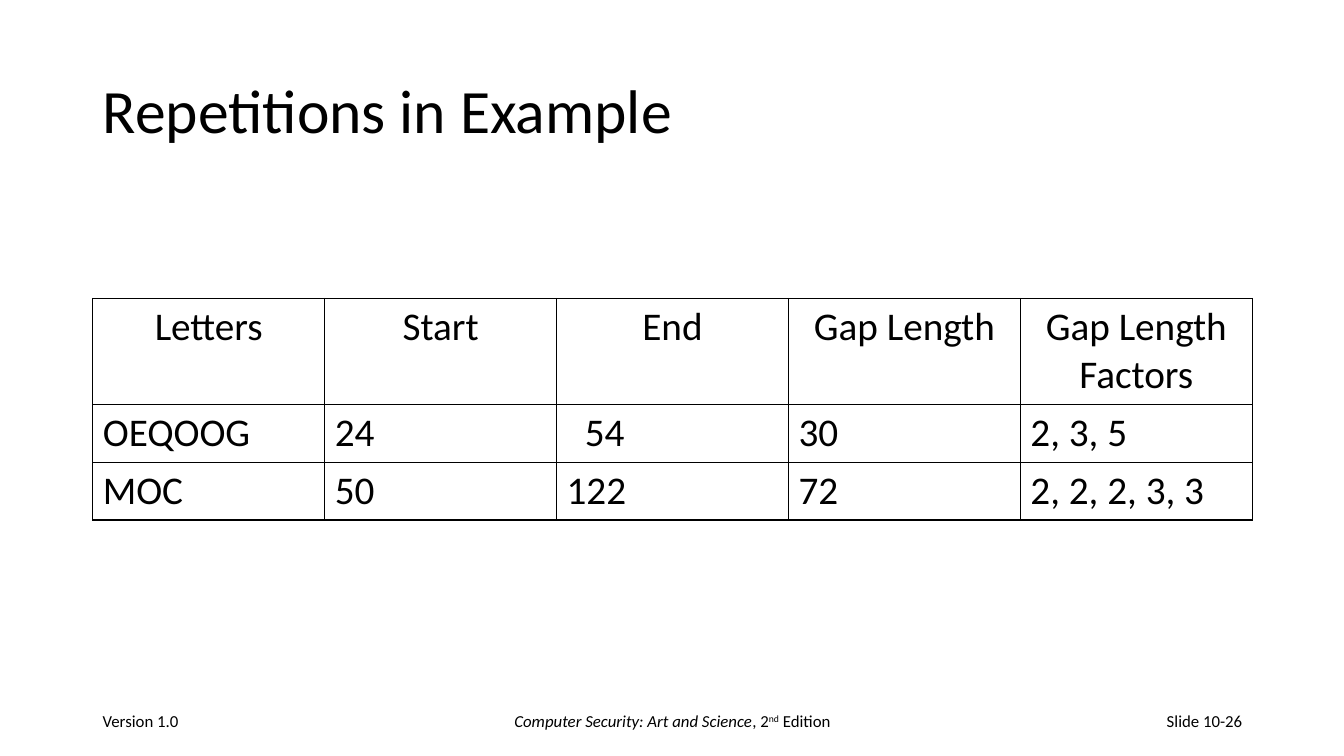
from lxml.etree import SubElement
from pptx import Presentation
from pptx.dml.color import RGBColor
from pptx.enum.text import MSO_ANCHOR, PP_ALIGN
from pptx.oxml.ns import qn
from pptx.util import Inches, Pt

TITLE = "Repetitions in Example"
ROWS = [
    ("Letters", "Start", "End", "Gap Length", "Gap Length Factors"),
    ("OEQOOG", "24", "54", "30", "2, 3, 5"),
    ("MOC", "50", "122", "72", "2, 2, 2, 3, 3"),
]
FOOTERS = [
    (3, PP_ALIGN.LEFT, [("Version 1.0", "")]),
    (4.5, PP_ALIGN.CENTER, [("Computer Security: Art and Science", "italic"), (", 2", ""),
                            ("nd", "super"), (" Edition", "")]),
    (3, PP_ALIGN.RIGHT, [("Slide 10-26", "")]),
]
BLACK = RGBColor(0, 0, 0)
FONT = "Calibri"
LEFT, WIDTH = 0.92, 11.5
COL_W = WIDTH / len(ROWS[0])
ROW_H = [1.05, 0.575, 0.575]
DIGIT_INDENT = 0.18


def add_run(p, text, size, style=""):
    r = p.add_run()
    r.text = text
    r.font.name, r.font.size = FONT, Pt(size)
    r.font.color.rgb = BLACK
    if style == "italic":
        r.font.italic = True
    elif style == "super":
        r.font._element.set("baseline", "30000")


def add_text(s, box, runs, size, align=PP_ALIGN.LEFT, spacing=1.0):
    tf = s.shapes.add_textbox(*map(Inches, box)).text_frame
    tf.word_wrap, tf.vertical_anchor = True, MSO_ANCHOR.MIDDLE
    p = tf.paragraphs[0]
    p.alignment, p.line_spacing = align, spacing
    for text, style in runs:
        add_run(p, text, size, style)


def add_borders(cell):
    tcPr = cell._tc.get_or_add_tcPr()
    for side in ("lnL", "lnR", "lnT", "lnB"):
        ln = SubElement(tcPr, qn(f"a:{side}"), w=str(Pt(1)))
        fill = SubElement(ln, qn("a:solidFill"))
        SubElement(fill, qn("a:srgbClr"), val=str(BLACK))


def add_grid(s):
    box = (LEFT, 2.96, WIDTH, sum(ROW_H))
    table = s.shapes.add_table(len(ROWS), len(ROWS[0]), *map(Inches, box)).table
    table.first_row = table.horz_banding = False
    for col in table.columns:
        col.width = Inches(COL_W)
    for i, values in enumerate(ROWS):
        table.rows[i].height = Inches(ROW_H[i])
        for j, value in enumerate(values):
            cell = table.cell(i, j)
            add_borders(cell)
            cell.fill.background()
            p = cell.text_frame.paragraphs[0]
            p.alignment = PP_ALIGN.LEFT if i else PP_ALIGN.CENTER
            add_run(p, value, 28)
            if value == "54":
                cell.margin_left = Inches(0.1 + DIGIT_INDENT)


def main():
    """Build the slide on repeated letter groups and their gaps."""
    prs = Presentation()
    prs.slide_width, prs.slide_height = Inches(13.33), Inches(7.5)
    s = prs.slides.add_slide(prs.slide_layouts[6])
    add_text(s, (LEFT, 0.4, WIDTH, 1.45), [(TITLE, "")], 44, spacing=0.9)
    add_grid(s)
    gap = (WIDTH - sum(w for w, _, _ in FOOTERS)) / (len(FOOTERS) - 1)
    x = LEFT
    for width, align, runs in FOOTERS:
        add_text(s, (x, 6.95, width, 0.4), runs, 12, align)
        x += width + gap
    prs.save("out.pptx")


if __name__ == "__main__":
    main()
